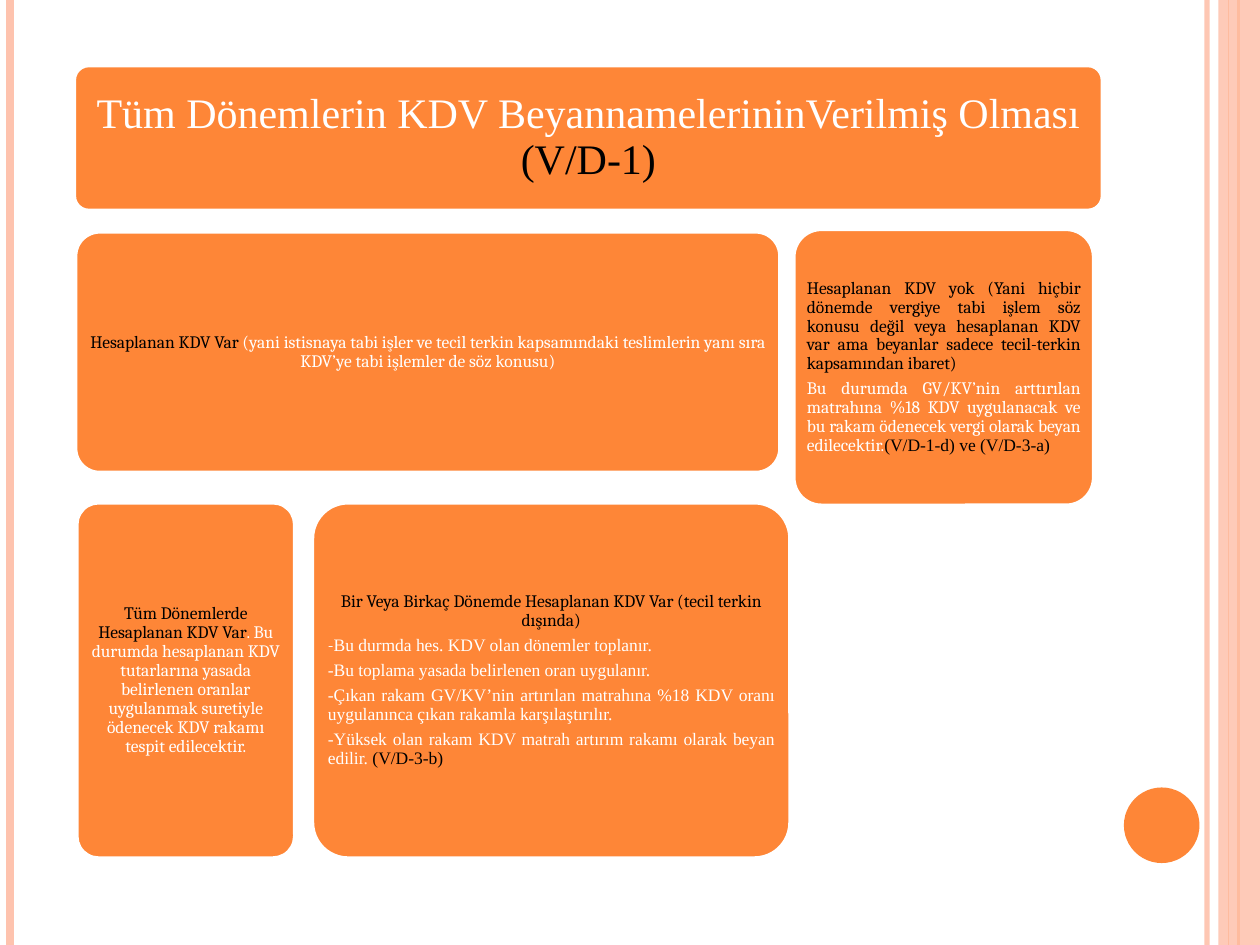
from dataclasses import dataclass

from lxml import etree
from pptx import Presentation
from pptx.dml.color import RGBColor
from pptx.enum.shapes import MSO_CONNECTOR, MSO_SHAPE
from pptx.enum.text import MSO_ANCHOR, MSO_AUTO_SIZE, PP_ALIGN
from pptx.oxml.ns import qn
from pptx.util import Inches, Pt

STRAIGHT = MSO_CONNECTOR.STRAIGHT
RECTANGLE, ROUNDED, OVAL = MSO_SHAPE.RECTANGLE, MSO_SHAPE.ROUNDED_RECTANGLE, MSO_SHAPE.OVAL
MIDDLE, NO_AUTOFIT = MSO_ANCHOR.MIDDLE, MSO_AUTO_SIZE.NONE
CENTER, JUSTIFY = PP_ALIGN.CENTER, PP_ALIGN.JUSTIFY


@dataclass(frozen=True)
class Theme:
    orange: RGBColor = RGBColor(0xFE, 0x86, 0x37)
    peach: RGBColor = RGBColor(0xFE, 0xC3, 0xAE)
    white: RGBColor = RGBColor(0xFF, 0xFF, 0xFF)
    black: RGBColor = RGBColor(0, 0, 0)
    serif: str = "Times New Roman"
    body: str = "Cambria"
    title_size: int = 24
    body_size: int = 10
    border: int = 2


THEME = Theme()
WIDTH, HEIGHT = 10, 7.5

# Each span is (text, colour, font); each paragraph is (alignment, spans).
TITLE = [(CENTER, [
    ("Tüm Dönemlerin KDV BeyannamelerininVerilmiş Olması ", THEME.white, THEME.serif),
    ("(V/D-1)", THEME.black, THEME.serif)])]

TAX_DUE = [(CENTER, [
    ("Hesaplanan KDV Var", THEME.black, THEME.body),
    (" (yani istisnaya tabi işler ve tecil terkin kapsamındaki teslimlerin yanı sıra "
     "KDV’ye tabi işlemler de söz konusu)", THEME.white, THEME.body)])]

NO_TAX_DUE = [
    (JUSTIFY, [
        ("Hesaplanan KDV yok (Yani hiçbir dönemde vergiye tabi işlem söz konusu değil "
         "veya hesaplanan KDV var ama beyanlar sadece tecil-terkin kapsamından ibaret)",
         THEME.black, THEME.body)]),
    (JUSTIFY, [
        ("Bu durumda GV/KV’nin arttırılan matrahına %18 KDV uygulanacak ve bu rakam "
         "ödenecek vergi olarak beyan edilecektir.", THEME.white, THEME.body),
        ("(V/D-1-d) ve (V/D-3-a)", THEME.black, THEME.serif)])]

ALL_PERIODS = [(CENTER, [
    ("Tüm Dönemlerde Hesaplanan KDV Var", THEME.black, THEME.body),
    (". Bu durumda hesaplanan KDV tutarlarına yasada belirlenen oranlar uygulanmak "
     "suretiyle ödenecek KDV rakamı tespit edilecektir.", THEME.white, THEME.body)])]

SOME_PERIODS = [
    (CENTER, [("Bir Veya Birkaç Dönemde Hesaplanan KDV Var (tecil terkin dışında)",
               THEME.black, THEME.body)]),
    (JUSTIFY, [("-", THEME.white, THEME.body),
               ("Bu durmda hes. KDV olan dönemler toplanır.", THEME.white, THEME.serif)]),
    (JUSTIFY, [("-Bu toplama yasada belirlenen oran uygulanır.", THEME.white, THEME.serif)]),
    (JUSTIFY, [("-Çıkan rakam GV/KV’nin artırılan matrahına %18 KDV oranı uygulanınca "
                "çıkan rakamla karşılaştırılır.", THEME.white, THEME.serif)]),
    (JUSTIFY, [("-Yüksek olan rakam KDV matrah artırım rakamı olarak beyan edilir. ",
                THEME.white, THEME.serif),
               ("(V/D-3-b)", THEME.black, THEME.serif)])]

# Left, top, width and height in inches
CARDS = [
    ((0.6, 1.84, 5.59, 1.91), TAX_DUE),
    ((0.61, 3.99, 1.73, 2.82), ALL_PERIODS),
    ((2.48, 3.99, 3.79, 2.82), SOME_PERIODS),
    ((6.3, 1.82, 2.38, 2.19), NO_TAX_DUE),
]


def set_opacity(part, percent):
    color = part._element.spPr.find(".//" + qn("a:srgbClr"))
    etree.SubElement(color, qn("a:alpha"), val=str(percent * 1000))


def add_filled(page, kind, box, color):
    shape = page.shapes.add_shape(kind, *map(Inches, box))
    shape.shadow.inherit = False
    shape.fill.solid()
    shape.fill.fore_color.rgb = color
    shape.line.fill.background()
    return shape


def add_stripe(page, x, color, width):
    stripe = page.shapes.add_connector(STRAIGHT, Inches(x), 0, Inches(x), Inches(HEIGHT))
    stripe.line.color.rgb = color
    stripe.line.width = Pt(width)
    etree.SubElement(stripe._element.spPr, qn("a:effectLst"))
    return stripe


def add_card(page, box):
    card = add_filled(page, ROUNDED, box, THEME.orange)
    card.adjustments[0] = 0.1
    card.line.color.rgb = THEME.white
    card.line.width = Pt(THEME.border)
    return card


def write_text(frame, paragraphs, size, inset):
    frame.word_wrap = True
    frame.auto_size = NO_AUTOFIT
    frame.vertical_anchor = MIDDLE
    frame.margin_left = frame.margin_right = Inches(inset)
    frame.margin_top = frame.margin_bottom = Inches(inset)
    for index, (alignment, spans) in enumerate(paragraphs):
        para = frame.add_paragraph() if index else frame.paragraphs[0]
        para.alignment = alignment
        para.line_spacing = 0.9
        para.space_before = Pt(0)
        para.space_after = Pt(0.35 * size)
        para.font.size = Pt(size)
        for text, color, font in spans:
            span = para.add_run()
            span.text = text
            span.font.color.rgb = color
            span.font.name = font


def draw_edges(page):
    # Stripes at both edges, the right-hand band and the round badge
    set_opacity(add_stripe(page, 9.58, THEME.peach, 3), 93)
    add_stripe(page, 0.08, THEME.peach, 4.5)
    # The band lies over this stripe and softens it
    add_stripe(page, 9.75, THEME.orange, 0.75)
    band = add_filled(page, RECTANGLE, (9.67, 0, WIDTH - 9.67, HEIGHT), THEME.peach)
    set_opacity(band, 87)
    band_line = add_stripe(page, 9.83, THEME.orange, 1.5)
    band._element.addprevious(band_line._element)
    stripe = page.shapes[-2]
    add_filled(page, OVAL, (8.92, 6.25, 0.6, 0.6), THEME.orange)
    return stripe


def draw_title(page, box):
    left, top, width, height = box
    card = add_card(page, box)
    title = page.shapes.title
    pad = 0.04
    title.left, title.top = Inches(left + pad), Inches(top + pad)
    title.width, title.height = Inches(width - 2 * pad), Inches(height - 2 * pad)
    write_text(title.text_frame, TITLE, THEME.title_size, 0.1)
    card._element.addnext(title._element)


def draw_cards(page, cards):
    for box, paragraphs in cards:
        card = add_card(page, box)
        write_text(card.text_frame, paragraphs, THEME.body_size, 0.04)


def main():
    deck = Presentation()
    deck.slide_width, deck.slide_height = Inches(WIDTH), Inches(HEIGHT)
    page = deck.slides.add_slide(deck.slide_layouts[5])
    page.background.fill.solid()
    page.background.fill.fore_color.rgb = THEME.white
    draw_edges(page)
    draw_title(page, (0.59, 0.52, 8.16, 1.15))
    draw_cards(page, CARDS)
    deck.save("out.pptx")


if __name__ == "__main__":
    main()
